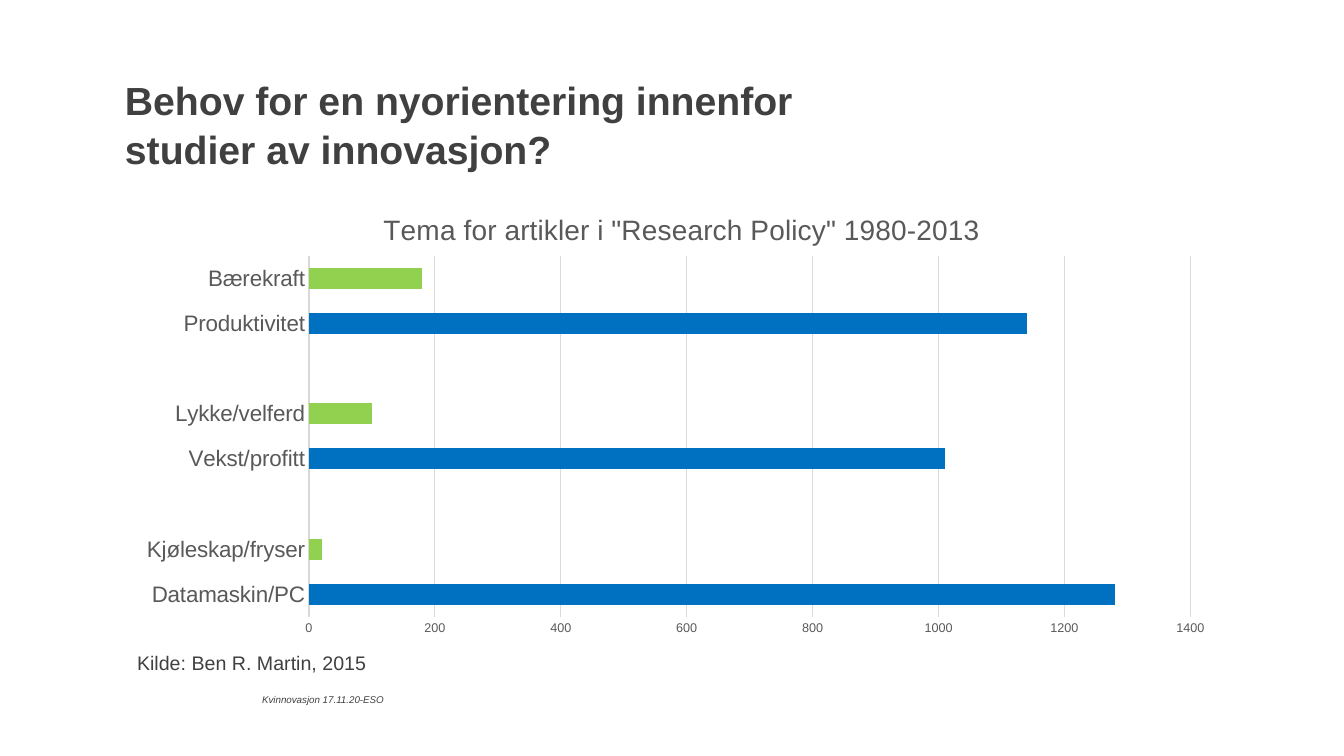
"""Build a slide with a bar chart of article topics in innovation studies."""
import pptx
import pptx.chart.data
import pptx.dml.color
import pptx.enum.chart
import pptx.enum.text
import pptx.oxml
import pptx.oxml.ns
import pptx.util

Pt = pptx.util.Pt
FONT = "Arial"
COLORS = {"text": "404040", "chart": "595959", "line": "D9D9D9",
          "blue": "0070C0", "green": "92D050"}
TOPICS = [("Datamaskin/PC", 1280, "blue"), ("Kjøleskap/fryser", 20, "green"),
          ("", None, "blue"),
          ("Vekst/profitt", 1010, "blue"), ("Lykke/velferd", 100, "green"),
          ("", None, "blue"),
          ("Produktivitet", 1140, "blue"), ("Bærekraft", 180, "green")]
TEXTS = [
    (89.3, 52.6, 787, 44.6, 28, True, False, "TOP",
     ["Behov for en nyorientering innenfor", "studier av innovasjon?"]),
    (187.2, 495.4, 303.8, 8.6, 7, False, True, "MIDDLE", ["Kvinnovasjon 17.11.20-ESO"]),
    (97.9, 465.1, 787, 44.6, 14, False, False, "TOP", ["Kilde: Ben R. Martin, 2015"]),
]


def set_font(font, size, color, bold=False, italic=False):
    font.name, font.size, font.bold, font.italic = FONT, Pt(size), bold, italic
    font.color.rgb = pptx.dml.color.RGBColor.from_string(COLORS[color])


def set_layout(parent, index, **values):
    ns = pptx.oxml.ns.nsdecls("c")
    items = "".join(f'<c:{tag} val="{val}"/>' for tag, val in values.items())
    for old in parent.findall(pptx.oxml.ns.qn("c:layout")):
        parent.remove(old)
    parent.insert(index, pptx.oxml.parse_xml(
        f"<c:layout {ns}><c:manualLayout>{items}</c:manualLayout></c:layout>"))


prs = pptx.Presentation()
prs.slide_width, prs.slide_height = Pt(960), Pt(540)
s = prs.slides.add_slide(prs.slide_layouts[6])

data = pptx.chart.data.CategoryChartData()
data.categories = [name for name, _, _ in TOPICS]
data.add_series("Series 1", [count for _, count, _ in TOPICS])
chart = s.shapes.add_chart(pptx.enum.chart.XL_CHART_TYPE.BAR_CLUSTERED,
                           Pt(89.3), Pt(131), Pt(787), Pt(329.8), data).chart
chart.has_legend = False
chart.font.name, chart.font.size = FONT, Pt(10)

chart.has_title = True
r = chart.chart_title.text_frame.paragraphs[0].add_run()
r.text = 'Tema for artikler i "Research Policy" 1980-2013'
set_font(r.font, 20, "chart")
set_layout(chart.chart_title._element, 1, xMode="edge", yMode="edge", x=0.23, y=0.05)

plot = chart.plots[0]
plot.gap_width, plot.overlap, plot.vary_by_categories = 115, -20, False
set_layout(chart._chartSpace.chart.plotArea, 0, layoutTarget="inner", xMode="edge",
           yMode="edge", x=0.167, y=0.157, w=0.8, h=0.782)

series = plot.series[0]
series.invert_if_negative = False
series.format.fill.solid()
series.format.fill.fore_color.rgb = pptx.dml.color.RGBColor.from_string(COLORS["blue"])
for i, (_, _, color) in enumerate(TOPICS):
    if color == "green":
        fill = series.points[i].format.fill
        fill.solid()
        fill.fore_color.rgb = pptx.dml.color.RGBColor.from_string(COLORS[color])

cat, val = chart.category_axis, chart.value_axis
for axis, size in ((cat, 16), (val, 9)):
    axis.major_tick_mark = axis.minor_tick_mark = pptx.enum.chart.XL_TICK_MARK.NONE
    set_font(axis.tick_labels.font, size, "chart")
cat.has_major_gridlines, val.has_major_gridlines = False, True
val.minimum_scale, val.maximum_scale, val.major_unit = 0, 1400, 200
val.format.line.fill.background()
for line, width in ((cat.format.line, 1), (val.major_gridlines.format.line, 0.75)):
    line.color.rgb = pptx.dml.color.RGBColor.from_string(COLORS["line"])
    line.width = Pt(width)

for x, y, w, h, size, bold, italic, anchor, lines in TEXTS:
    tf = s.shapes.add_textbox(Pt(x), Pt(y), Pt(w), Pt(h)).text_frame
    tf.word_wrap = True
    tf.margin_left = tf.margin_right = tf.margin_top = tf.margin_bottom = 0
    tf.vertical_anchor = pptx.enum.text.MSO_ANCHOR[anchor]
    p = tf.paragraphs[0]
    p.line_spacing = 1.05 if len(lines) > 1 else 1
    for i, text in enumerate(lines):
        if i:
            p.add_line_break()
        r = p.add_run()
        r.text = text
        set_font(r.font, size, "text", bold, italic)

prs.save("out.pptx")
